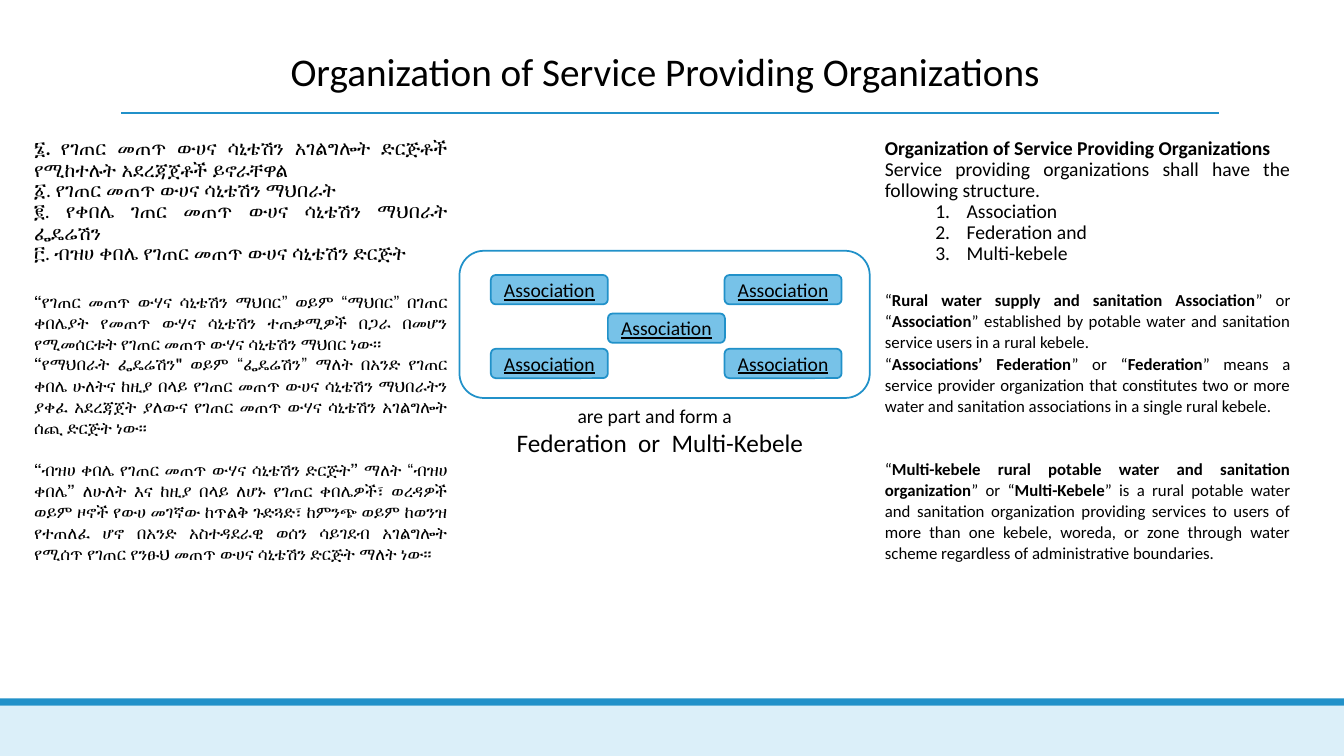
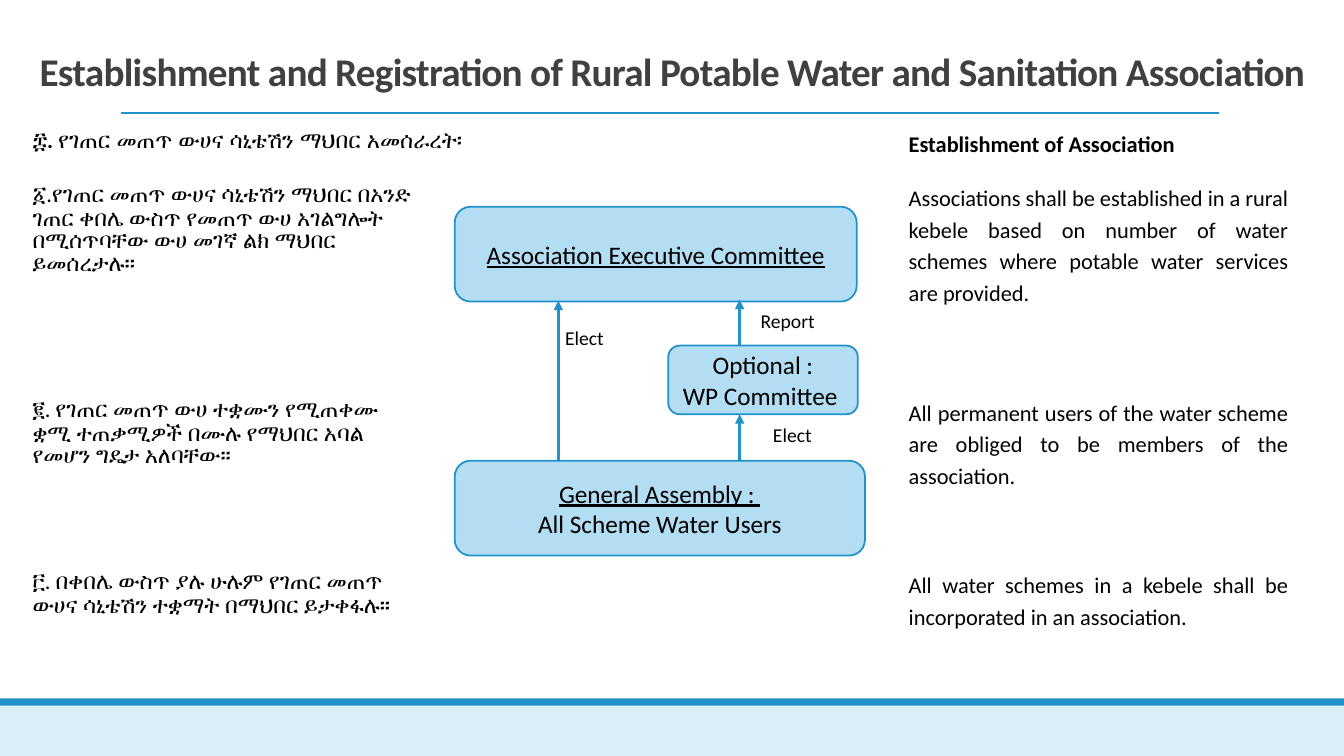
from lxml.etree import SubElement
from pptx import Presentation
from pptx.dml.color import RGBColor
from pptx.enum.shapes import MSO_CONNECTOR, MSO_SHAPE
from pptx.enum.text import MSO_ANCHOR, PP_ALIGN
from pptx.oxml.ns import qn
from pptx.util import Cm, Pt

BLACK = RGBColor(0x00, 0x00, 0x00)
DARK_GREY = RGBColor(0x40, 0x40, 0x40)
BLUE = RGBColor(0x21, 0x91, 0xC9)
MID_BLUE = RGBColor(0x77, 0xC2, 0xE8)
LIGHT_BLUE = RGBColor(0xB3, 0xDD, 0xF2)
PALE_BLUE = RGBColor(0xDB, 0xEF, 0xF9)
FONT = "Calibri"
NO_STYLE = "{2D5ABB26-0587-4C30-8999-92F81FD0307C}"
NUMBERED = "# "
LEFT, CENTER, JUSTIFY = PP_ALIGN.LEFT, PP_ALIGN.CENTER, PP_ALIGN.JUSTIFY


def write(frame, lines, size, align=LEFT, spacing=None, color=BLACK, emphasis="bold"):
    frame.word_wrap = True
    for line in lines:
        para = frame.add_paragraph() if frame.text else frame.paragraphs[0]
        para.alignment = align
        if spacing:
            para.line_spacing = spacing
        if line.startswith(NUMBERED):
            line = line.removeprefix(NUMBERED)
            para.level = 1
            properties = para._p.get_or_add_pPr()
            properties.set("marL", str(Cm(2.06)))
            properties.set("indent", str(-Cm(0.79)))
            SubElement(properties, qn("a:buAutoNum"), type="arabicPeriod")
        for index, text in enumerate(line.split("**")):
            if text:
                span = para.add_run()
                span.text = text
                span.font.name = FONT
                span.font.size = Pt(size)
                span.font.color.rgb = color
                marked = index % 2 == 1
                span.font.bold = marked and emphasis == "bold"
                span.font.underline = marked and emphasis == "underline"


def add_box(page, left, top, width, height, fill=None, lines=(), size=18):
    box = page.shapes.add_shape(
        MSO_SHAPE.ROUNDED_RECTANGLE, Cm(left), Cm(top), Cm(width), Cm(height))
    box.shadow.inherit = False
    if fill:
        box.fill.solid()
        box.fill.fore_color.rgb = fill
    else:
        box.fill.background()
    box.line.color.rgb = BLUE
    box.line.width = Pt(1.25)
    box.text_frame.vertical_anchor = MSO_ANCHOR.MIDDLE
    write(box.text_frame, lines, size, CENTER, emphasis="underline")


structure_rows = [
    (
        [
            "**፮. የገጠር መጠጥ ውሀና ሳኒቴሽን አገልግሎት ድርጅቶች የሚከተሉት አደረጃጀቶች ይኖራቸዋል**",
            "፩. የገጠር መጠጥ ውሀና ሳኒቴሽን ማህበራት",
            "፪. የቀበሌ ገጠር መጠጥ ውሀና ሳኒቴሽን ማህበራት ፌዴሬሽን",
            "፫. ብዝሀ ቀበሌ የገጠር መጠጥ ውሀና ሳኒቴሽን ድርጅት",
        ],
        [
            "**Organization of Service Providing Organizations **",
            "Service providing organizations shall have the following structure.",
            NUMBERED + "Association",
            NUMBERED + "Federation and",
            NUMBERED + "Multi-kebele ",
        ],
    ),
    (
        ["**“የገጠር መጠጥ ውሃና ሳኒቴሽን ማህበር**” ወይም “**ማህበር**” በገጠር ቀበሌያት የመጠጥ ውሃና "
         "ሳኒቴሽን ተጠቃሚዎች በጋራ በመሆን የሚመሰርቱት የገጠር መጠጥ ውሃና ሳኒቴሽን ማህበር ነው፡፡"],
        ["“**Rural water supply and sanitation Association**” or “**Association**” "
         "established by potable water and sanitation service users in a rural kebele."],
    ),
    (
        ["**“የማህበራት ፌዴሬሽን\" **ወይም “**ፌዴሬሽን**” ማለት በአንድ የገጠር ቀበሌ ሁለትና ከዚያ በላይ "
         "የገጠር መጠጥ ውሀና ሳኒቴሽን ማህበራትን ያቀፈ አደረጃጀት ያለውና የገጠር መጠጥ ውሃና ሳኒቴሽን "
         "አገልግሎት ሰጪ ድርጅት ነው፡፡"],
        ["“**Associations’ Federation**” or “**Federation**” means a service provider "
         "organization that constitutes two or more water and sanitation associations "
         "in a single rural kebele."],
    ),
    (
        ["**“**ብዝሀ **ቀበሌ የገጠር መጠጥ ውሃና ሳኒቴሽን ድርጅት” **ማለት “**ብዝሀ ቀበሌ” **ለሁለት እና "
         "ከዚያ በላይ ለሆኑ የገጠር ቀበሌዎች፣ ወረዳዎች ወይም ዞኖች የውሀ መገኛው ከጥልቅ ጉድጓድ፣ ከምንጭ "
         "ወይም ከወንዝ የተጠለፈ ሆኖ በአንድ አስተዳደራዊ ወሰን ሳይገደብ አገልግሎት የሚሰጥ የገጠር የንፁህ "
         "መጠጥ ውሀና ሳኒቴሽን ድርጅት ማለት ነው፡፡"],
        ["“**Multi-kebele rural potable water and sanitation organization**” or "
         "“**Multi-Kebele**” is a rural potable water and sanitation organization "
         "providing services to users of more than one kebele, woreda, or zone through "
         "water scheme regardless of administrative boundaries."],
    ),
]

establishment_rows = [
    (
        ["**፰. የገጠር መጠጥ ውሀና ሳኒቴሽን ማህበር አመሰራረት፡**"],
        ["**Establishment of Association**"],
    ),
    (
        ["፩.የገጠር መጠጥ ውሀና ሳኒቴሽን ማህበር በአንድ ገጠር ቀበሌ ውስጥ የመጠጥ ውሀ አገልግሎት "
         "በሚሰጥባቸው ውሀ መገኛ ልክ ማህበር ይመሰረታሉ፡፡"],
        ["Associations shall be established in a rural kebele based on number of water "
         "schemes where potable water services are provided."],
    ),
    (
        ["፪. የገጠር መጠጥ ውሀ ተቋሙን የሚጠቀሙ ቋሚ ተጠቃሚዎች በሙሉ የማህበር አባል የመሆን ግዴታ "
         "አለባቸው፡፡"],
        ["All permanent users of the water scheme are obliged to be members of the "
         "association."],
    ),
    (
        ["፫. በቀበሌ ውስጥ ያሉ ሁሉም የገጠር መጠጥ ውሀና ሳኒቴሽን ተቋማት በማህበር ይታቀፋሉ፡፡"],
        ["All water schemes in a kebele shall be incorporated in an association."],
    ),
]

slides = [
    {
        "title": "Organization of Service Providing Organizations ",
        "title_left": 0.79, "title_width": 32.16, "title_color": BLACK, "tracking": 0,
        "left": 0.61, "top": 3.51, "inset": 0.25,
        "columns": [10.92, 10.52, 10.72], "heights": [3.81, 1.59, 2.65, 2.65],
        "rows": structure_rows, "sizes": [14, 12, 12, 12],
        "aligns": (JUSTIFY, JUSTIFY), "spacings": (Pt(15), Pt(15)),
    },
    {
        "title": "**Establishment and Registration of Rural Potable Water and "
                 "Sanitation Association**",
        "title_left": 0.63, "title_width": 32.61, "title_color": DARK_GREY, "tracking": -50,
        "left": 0.64, "top": 3.2, "inset": 0.18,
        "columns": [10.01, 12.07, 9.93], "heights": [1.37, 5.41, 4.34, 3.25],
        "rows": establishment_rows, "sizes": [16, 16, 16, 16],
        "aligns": (LEFT, JUSTIFY), "spacings": (None, 1.15),
    },
]

deck = Presentation()
deck.slide_width = Cm(33.87)
deck.slide_height = Cm(19.05)
pages = []
tables = []

for content in slides:
    page = deck.slides.add_slide(deck.slide_layouts[6])
    pages.append(page)

    for top, height, color in [(17.78, 1.27, PALE_BLUE), (17.6, 0.18, BLUE)]:
        band = page.shapes.add_shape(
            MSO_SHAPE.RECTANGLE, 0, Cm(top), deck.slide_width, Cm(height))
        band.shadow.inherit = False
        band.fill.solid()
        band.fill.fore_color.rgb = color
        band.line.fill.background()

    rule = page.shapes.add_connector(
        MSO_CONNECTOR.STRAIGHT, Cm(3.05), Cm(2.84), Cm(30.73), Cm(2.84))
    rule.line.color.rgb = BLUE
    rule.line.width = Pt(1.5)
    SubElement(rule._element.spPr, qn("a:effectLst"))

    title = page.shapes.add_textbox(
        Cm(content["title_left"]), Cm(0.79), Cm(content["title_width"]), Cm(1.73))
    title.text_frame.vertical_anchor = MSO_ANCHOR.BOTTOM
    write(title.text_frame, [content["title"]], 28, CENTER, 0.85, content["title_color"])
    if content["tracking"]:
        for span in title.text_frame.paragraphs[0].runs:
            span.font._element.set("spc", str(content["tracking"]))

    columns, heights = content["columns"], content["heights"]
    table = page.shapes.add_table(
        len(heights), len(columns), Cm(content["left"]), Cm(content["top"]),
        Cm(sum(columns)), Cm(sum(heights))).table
    tables.append(table)
    table.first_row = False
    table.horz_banding = False
    table._tbl.tblPr.find(qn("a:tableStyleId")).text = NO_STYLE
    for column, width in zip(table.columns, columns):
        column.width = Cm(width)
    for row, height in zip(table.rows, heights):
        row.height = Cm(height)
    for cell in table.iter_cells():
        cell.fill.background()
        cell.margin_left = cell.margin_right = Cm(content["inset"])
        cell.margin_top = cell.margin_bottom = 0
    for row, (texts, size) in enumerate(zip(content["rows"], content["sizes"])):
        for column, lines, align, spacing in zip(
                (0, 2), texts, content["aligns"], content["spacings"]):
            write(table.cell(row, column).text_frame, lines, size, align, spacing)

structure, establishment = pages
tables[1].cell(0, 0).merge(tables[1].cell(0, 1))

add_box(structure, 11.58, 6.32, 10.34, 3.71)
for left, top in [(12.37, 6.93), (18.26, 6.93), (15.32, 7.9), (12.37, 8.79), (18.26, 8.79)]:
    add_box(structure, left, top, 2.95, 0.74, MID_BLUE, ["**Association**"], 14)

caption = structure.shapes.add_textbox(Cm(12.24), Cm(10.06), Cm(8.64), Cm(1.63))
write(caption.text_frame, ["are part and form a "], 14, CENTER)
write(caption.text_frame, [" Federation  or  Multi-Kebele"], 18, CENTER)

add_box(establishment, 11.46, 11.61, 10.34, 2.39, LIGHT_BLUE,
        ["**General Assembly : **", "All Scheme Water Users"])
add_box(establishment, 11.46, 5.21, 10.13, 2.39, LIGHT_BLUE,
        ["**Association Executive Committee**"])
add_box(establishment, 16.84, 8.71, 4.78, 1.73, LIGHT_BLUE,
        ["Optional :", "WP Committee "])

for x, start, end in [(14.07, 11.61, 7.58), (18.64, 11.61, 10.44), (18.64, 8.71, 7.55)]:
    arrow = establishment.shapes.add_connector(
        MSO_CONNECTOR.STRAIGHT, Cm(x), Cm(start), Cm(x), Cm(end))
    arrow.line.color.rgb = BLUE
    arrow.line.width = Pt(2.25)
    properties = arrow._element.spPr
    SubElement(properties.find(qn("a:ln")), qn("a:tailEnd"), type="triangle")
    SubElement(properties, qn("a:effectLst"))

for text, left, top in [("Elect", 13.99, 8.08), ("Elect", 19.23, 10.52), ("Report", 18.92, 7.67)]:
    label = establishment.shapes.add_textbox(Cm(left), Cm(top), Cm(2.39), Cm(0.86))
    write(label.text_frame, [text], 14)

deck.save("out.pptx")
